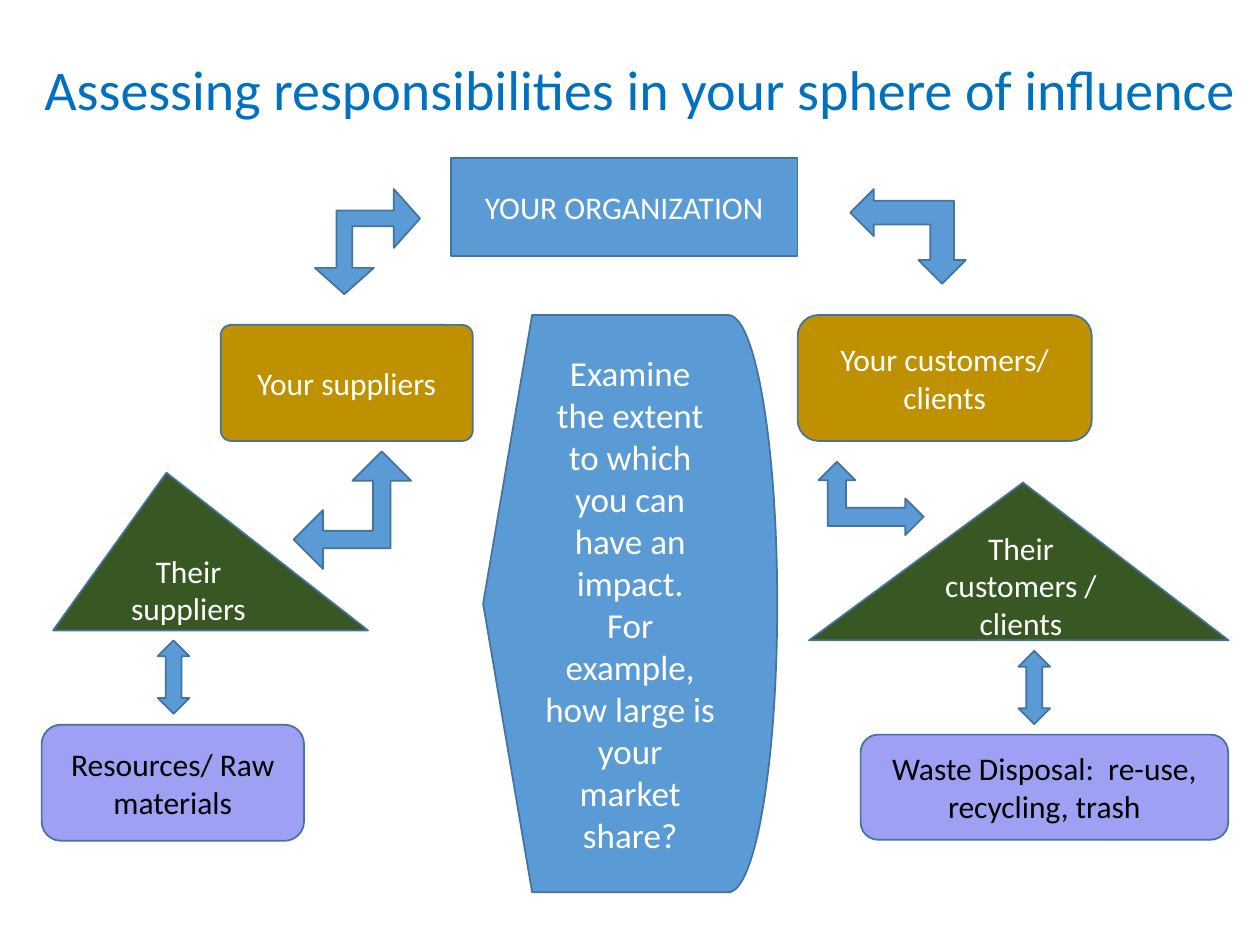
from dataclasses import dataclass

from pptx import Presentation
from pptx.dml.color import RGBColor
from pptx.enum.shapes import MSO_SHAPE
from pptx.enum.text import MSO_ANCHOR, PP_ALIGN
from pptx.util import Cm, Pt


@dataclass(frozen=True)
class Theme:
    font: str = "Calibri"
    title: str = "0070C0"
    blue: str = "5B9BD5"
    gold: str = "BF9000"
    green: str = "385723"
    lilac: str = "9EA0F4"
    outline: str = "43739E"
    light: str = "FFFFFF"
    dark: str = "000000"
    title_size: int = 32
    label_size: int = 18
    note_size: int = 20


THEME = Theme()
TITLE = "Assessing responsibilities in your sphere of influence"
TITLE_PLACE = (0.64, 0.76, 24.77, 2.21)

BOXES = [
    dict(kind=MSO_SHAPE.RECTANGLE, place=(9.09, 3.18, 6.99, 1.98),
         lines=["YOUR ORGANIZATION"], flip=True),
    dict(kind=MSO_SHAPE.ROUNDED_RECTANGLE, place=(4.45, 6.55, 5.08, 2.34),
         lines=["Your suppliers"], fill=THEME.gold, adjust=[0.09]),
    dict(kind=MSO_SHAPE.ISOSCELES_TRIANGLE, place=(1.07, 9.53, 6.35, 3.18),
         lines=["Their suppliers"], fill=THEME.green, adjust=[0.36],
         anchor=MSO_ANCHOR.TOP, top=0),
    dict(kind=MSO_SHAPE.ISOSCELES_TRIANGLE, place=(16.31, 9.73, 8.46, 3.18),
         lines=["Their customers / clients"], fill=THEME.green, adjust=[0.51],
         bottom=0.76),
    dict(kind=MSO_SHAPE.ROUNDED_RECTANGLE, place=(16.08, 6.35, 5.93, 2.54),
         lines=["Your customers/ clients"], fill=THEME.gold),
    dict(kind=MSO_SHAPE.FLOWCHART_ALTERNATE_PROCESS, place=(0.84, 14.61, 5.29, 2.34),
         lines=["Resources/ Raw materials"], fill=THEME.lilac, color=THEME.dark),
    dict(kind=MSO_SHAPE.ROUNDED_RECTANGLE, place=(17.35, 14.81, 7.41, 2.12),
         lines=["Waste Disposal:  re-use, recycling, trash"],
         fill=THEME.lilac, color=THEME.dark),
    dict(kind=MSO_SHAPE.FLOWCHART_DISPLAY, place=(9.74, 6.35, 5.93, 11.64),
         lines=["Examine the extent to which you can have an impact.",
                "For example, how large is your market share?"],
         size=THEME.note_size),
]

ARROWS = [
    dict(kind=MSO_SHAPE.LEFT_UP_ARROW, place=(5.92, 9.1, 2.37, 2.37),
         adjust=[0.15, 0.25, 0.25]),
    dict(kind=MSO_SHAPE.LEFT_UP_ARROW, place=(6.35, 3.81, 2.12, 2.12),
         adjust=[0.15, 0.28, 0.25], turn=90, flip=True),
    dict(kind=MSO_SHAPE.LEFT_UP_ARROW, place=(17.35, 3.6, 1.91, 2.33), turn=270),
    dict(kind=MSO_SHAPE.LEFT_UP_ARROW, place=(16.82, 8.99, 1.48, 2.12), turn=90),
    dict(kind=MSO_SHAPE.UP_DOWN_ARROW, place=(3.18, 12.91, 0.64, 1.48)),
    dict(kind=MSO_SHAPE.UP_DOWN_ARROW, place=(20.53, 13.12, 0.64, 1.48)),
]


def write(paragraph, text, size, color, align):
    paragraph.alignment = align
    span = paragraph.add_run()
    span.text = text
    span.font.name = THEME.font
    span.font.size = Pt(size)
    span.font.color.rgb = RGBColor.from_string(color)


def add_figure(page, kind, place, fill=THEME.blue, adjust=(), turn=0, flip=False):
    figure = page.shapes.add_shape(kind, *map(Cm, place))
    figure.shadow.inherit = False
    figure.fill.solid()
    figure.fill.fore_color.rgb = RGBColor.from_string(fill)
    figure.line.color.rgb = RGBColor.from_string(THEME.outline)
    figure.line.width = Pt(1)
    for index, value in enumerate(adjust):
        figure.adjustments[index] = value
    figure.rotation = turn
    if flip:
        figure._element.spPr.xfrm.set("flipH", "1")
    return figure


def add_box(page, lines, color=THEME.light, size=THEME.label_size,
            anchor=MSO_ANCHOR.MIDDLE, top=0.13, bottom=0.13, **look):
    frame = add_figure(page, **look).text_frame
    frame.word_wrap = True
    frame.vertical_anchor = anchor
    frame.margin_top, frame.margin_bottom = Cm(top), Cm(bottom)
    for index, line in enumerate(lines):
        paragraph = frame.add_paragraph() if index else frame.paragraphs[0]
        write(paragraph, line, size, color, PP_ALIGN.CENTER)


def add_title(page):
    title = page.shapes.title
    title.left, title.top, title.width, title.height = map(Cm, TITLE_PLACE)
    frame = title.text_frame
    frame.word_wrap = True
    frame.vertical_anchor = MSO_ANCHOR.MIDDLE
    paragraph = frame.paragraphs[0]
    paragraph.line_spacing = 0.9
    write(paragraph, TITLE, THEME.title_size, THEME.title, PP_ALIGN.LEFT)


def main():
    deck = Presentation()
    deck.slide_width, deck.slide_height = Cm(25.4), Cm(19.05)
    page = deck.slides.add_slide(deck.slide_layouts[5])
    add_title(page)
    for box in BOXES:
        add_box(page, **box)
    for arrow in ARROWS:
        add_figure(page, **arrow)
    deck.save("out.pptx")


if __name__ == "__main__":
    main()
